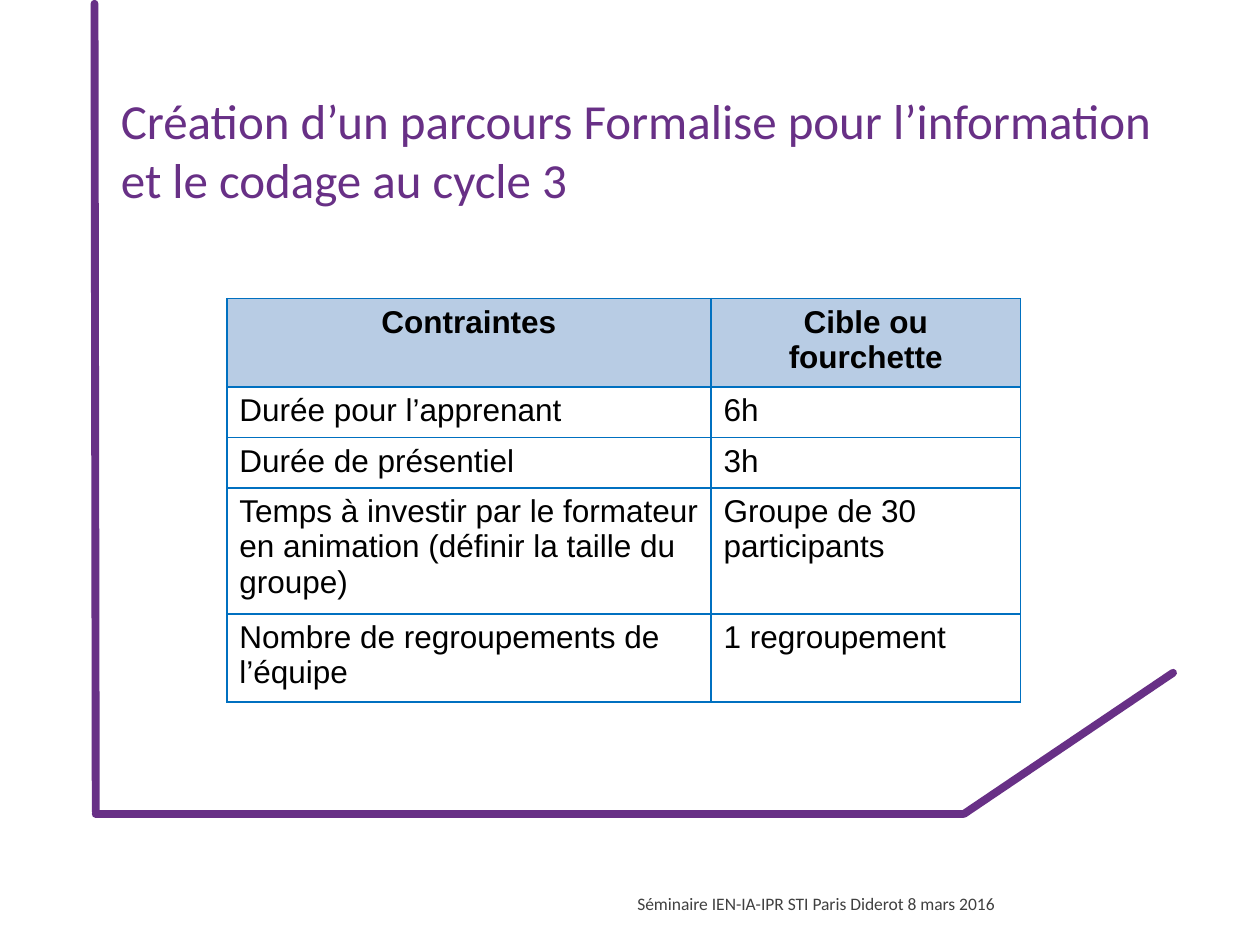
import dataclasses

import lxml.etree
import pptx
import pptx.dml.color
import pptx.enum.dml
import pptx.enum.shapes
import pptx.enum.text
import pptx.oxml.ns
import pptx.util

Inches = pptx.util.Inches
Pt = pptx.util.Pt
qn = pptx.oxml.ns.qn


@dataclasses.dataclass(frozen=True)
class Theme:
    accent: str = "683086"
    footer: str = "404040"
    text: str = "000000"
    border: str = "0070C0"
    header_fill: str = "B8CCE4"
    heading_font: str = "Calibri"
    table_font: str = "Arial"
    title_size: int = 28
    table_size: int = 18
    footer_size: int = 10
    frame_width: float = 4.5
    border_width: float = 1


THEME = Theme()
TITLE = "Création d’un parcours Formalise pour l’information et le codage au cycle 3"
FOOTER = "Séminaire IEN-IA-IPR STI Paris Diderot 8 mars 2016"
CONSTRAINTS = [
    ("Contraintes", "Cible ou fourchette"),
    ("Durée pour l’apprenant", "6h"),
    ("Durée de présentiel", "3h"),
    ("Temps à investir par le formateur en animation (définir la taille du groupe)",
     "Groupe de 30 participants"),
    ("Nombre de regroupements de l’équipe", "1 regroupement"),
]
COLUMN_SHARES = (0.61, 0.39)
ROW_HEIGHTS = (0.66, 0.38, 0.38, 0.94, 0.66)
FRAME_LINES = [
    ((0.76, 6.46), (7.64, 6.46)),
    ((7.65, 6.46), (9.31, 5.34)),
    ((0.76, 6.44), (0.75, 0.03)),
]


def rgb(value):
    return pptx.dml.color.RGBColor.from_string(value)


def format_runs(paragraph, font_name, size, color, bold=False):
    for run in paragraph.runs:
        run.font.name = font_name
        run.font.size = Pt(size)
        run.font.color.rgb = rgb(color)
        run.font.bold = bold


def place(shape, box):
    shape.left, shape.top, shape.width, shape.height = map(Inches, box)


def add_frame(slide, lines):
    for start, end in lines:
        connector = slide.shapes.add_connector(
            pptx.enum.shapes.MSO_CONNECTOR.STRAIGHT, *map(Inches, start + end))
        connector.line.color.rgb = rgb(THEME.accent)
        connector.line.width = Pt(THEME.frame_width)
        properties = connector._element.spPr
        properties.find(qn("a:ln")).set("cap", "rnd")
        lxml.etree.SubElement(properties, qn("a:effectLst"))


def set_title(slide, box):
    title = slide.shapes.title
    place(title, box)
    text_frame = title.text_frame
    text_frame.text = TITLE
    text_frame.word_wrap = True
    text_frame.auto_size = pptx.enum.text.MSO_AUTO_SIZE.NONE
    text_frame.vertical_anchor = pptx.enum.text.MSO_ANCHOR.TOP
    paragraph = text_frame.paragraphs[0]
    paragraph.alignment = pptx.enum.text.PP_ALIGN.LEFT
    format_runs(paragraph, THEME.heading_font, THEME.title_size, THEME.accent)


def add_footer(slide, box):
    text_frame = slide.shapes.add_textbox(*map(Inches, box)).text_frame
    text_frame.text = FOOTER
    text_frame.word_wrap = True
    text_frame.vertical_anchor = pptx.enum.text.MSO_ANCHOR.MIDDLE
    format_runs(text_frame.paragraphs[0], THEME.heading_font, THEME.footer_size,
                THEME.footer)


def set_borders(cell):
    properties = cell._tc.get_or_add_tcPr()
    for side in ("a:lnL", "a:lnR", "a:lnT", "a:lnB"):
        line = lxml.etree.SubElement(properties, qn(side), w=str(Pt(THEME.border_width)))
        fill = lxml.etree.SubElement(line, qn("a:solidFill"))
        lxml.etree.SubElement(fill, qn("a:srgbClr"), val=THEME.border)


def format_cell(cell, text, is_header):
    cell.text_frame.text = text
    set_borders(cell)
    paragraph = cell.text_frame.paragraphs[0]
    if is_header:
        cell.fill.solid()
        cell.fill.fore_color.rgb = rgb(THEME.header_fill)
        paragraph.alignment = pptx.enum.text.PP_ALIGN.CENTER
    else:
        cell.fill.background()
    format_runs(paragraph, THEME.table_font, THEME.table_size, THEME.text, is_header)


def add_constraints_table(slide, box):
    table = slide.shapes.add_table(
        len(CONSTRAINTS), len(COLUMN_SHARES), *map(Inches, box)).table
    table.horz_banding = False
    for column, share in zip(table.columns, COLUMN_SHARES):
        column.width = Inches(box[2] * share)
    for row, height in zip(table.rows, ROW_HEIGHTS):
        row.height = Inches(height)
    for row_index, texts in enumerate(CONSTRAINTS):
        for column_index, text in enumerate(texts):
            format_cell(table.cell(row_index, column_index), text, row_index == 0)


def main():
    presentation = pptx.Presentation()
    presentation.slide_width = Inches(10)
    presentation.slide_height = Inches(7.5)
    slide = presentation.slides.add_slide(
        presentation.slide_layouts.get_by_name("Title Only"))
    add_frame(slide, FRAME_LINES)
    add_footer(slide, (4.96, 6.97, 3.83, 0.4))
    set_title(slide, (0.86, 0.67, 8.64, 1.36))
    add_constraints_table(slide, (1.8, 2.37, 6.3, sum(ROW_HEIGHTS)))
    presentation.save("out.pptx")


if __name__ == "__main__":
    main()
